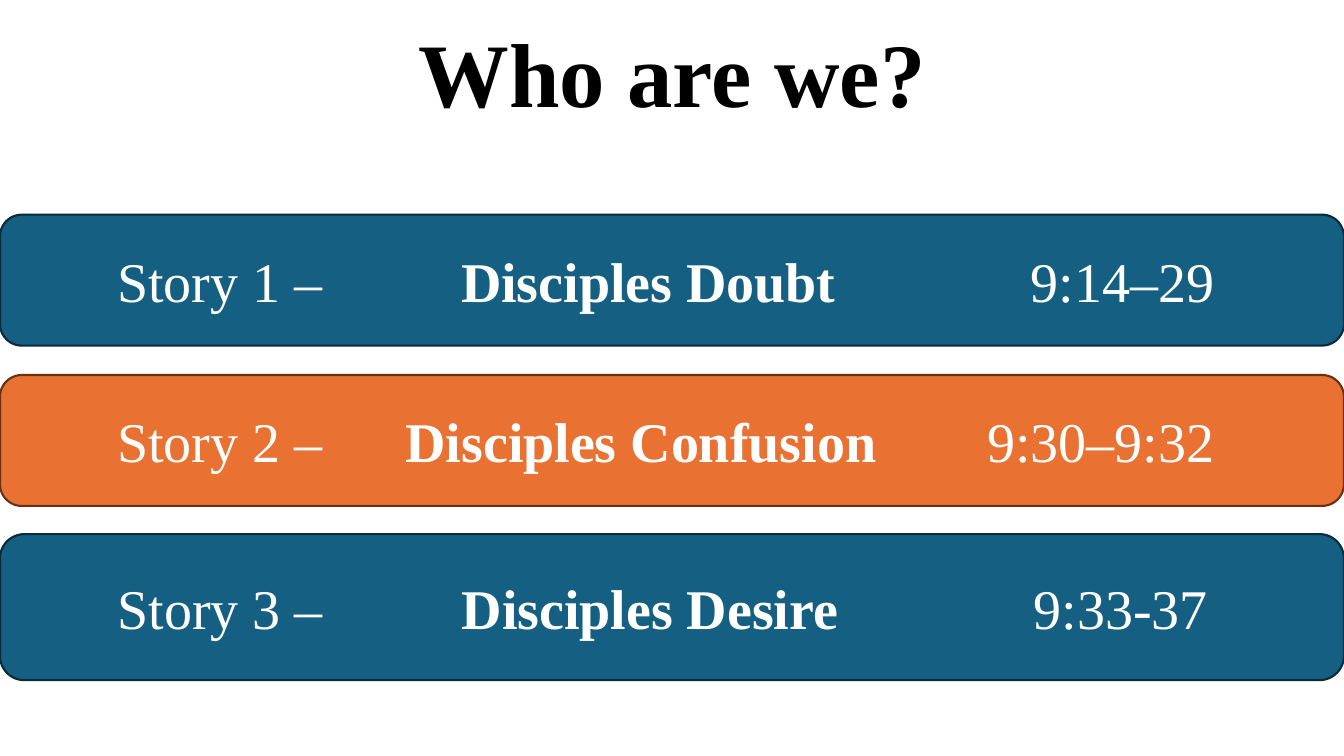
from pptx import Presentation
from pptx.util import Cm, Pt
from pptx.dml.color import RGBColor as Rgb
from pptx.enum.shapes import MSO_SHAPE as Kind
from pptx.enum.text import MSO_ANCHOR as Anchor, PP_ALIGN as Align
from pptx.oxml.ns import qn
from lxml.etree import SubElement as Sub

INK = {
    "black": "000000",
    "white": "FFFFFF",
    "blue": "156082",
    "navy": "092A39",
    "orange": "E97132",
    "brown": "663216",
}
WIDE = Cm(33.87)


def add_run(para, text, size, ink, bold):
    run = para.add_run()
    run.text = text
    font = run.font
    font.name = "Times New Roman"
    font.size = Pt(size)
    font.bold = bold
    font.color.rgb = Rgb.from_string(INK[ink])


deck = Presentation()
deck.slide_width = WIDE
deck.slide_height = Cm(19.05)
slide = deck.slides.add_slide(deck.slide_layouts[6])

title = slide.shapes.add_textbox(0, Cm(0.56), WIDE, Cm(2.84))
frame = title.text_frame
frame.word_wrap = True
frame.vertical_anchor = Anchor.MIDDLE
para = frame.paragraphs[0]
para.alignment = Align.CENTER
para.line_spacing = 0.9
add_run(para, "Who are we?", 64.8, "black", True)

stories = [
    ("Disciples Doubt", "9:14–29", 5.41, 3.3, "blue", "navy", (8.67, 23.03)),
    ("Disciples Confusion", "9:30–9:32", 9.45, 3.3, "orange", "brown", (7.27, 21.93)),
    ("Disciples Desire", "9:33-37", 13.46, 3.68, "blue", "navy", (8.67, 23.08)),
]
for num, (name, verse, top, high, fill, edge, stops) in enumerate(stories, 1):
    bar = slide.shapes.add_shape(Kind.ROUNDED_RECTANGLE, 0, Cm(top), WIDE, Cm(high))
    bar.shadow.inherit = False
    bar.fill.solid()
    bar.fill.fore_color.rgb = Rgb.from_string(INK[fill])
    bar.line.color.rgb = Rgb.from_string(INK[edge])
    bar.line.width = Pt(1.5)
    frame = bar.text_frame
    frame.word_wrap = True
    frame.vertical_anchor = Anchor.MIDDLE
    frame.margin_left = Cm(2.79)
    para = frame.paragraphs[0]
    para.alignment = Align.LEFT
    tabs = Sub(para._p.get_or_add_pPr(), qn("a:tabLst"))
    for stop in stops:
        Sub(tabs, qn("a:tab"), pos=str(Cm(stop)), algn="l")
    add_run(para, f"Story {num} –\t", 40, "white", False)
    add_run(para, name, 40, "white", True)
    add_run(para, f"\t{verse}", 40, "white", False)

deck.save("out.pptx")
